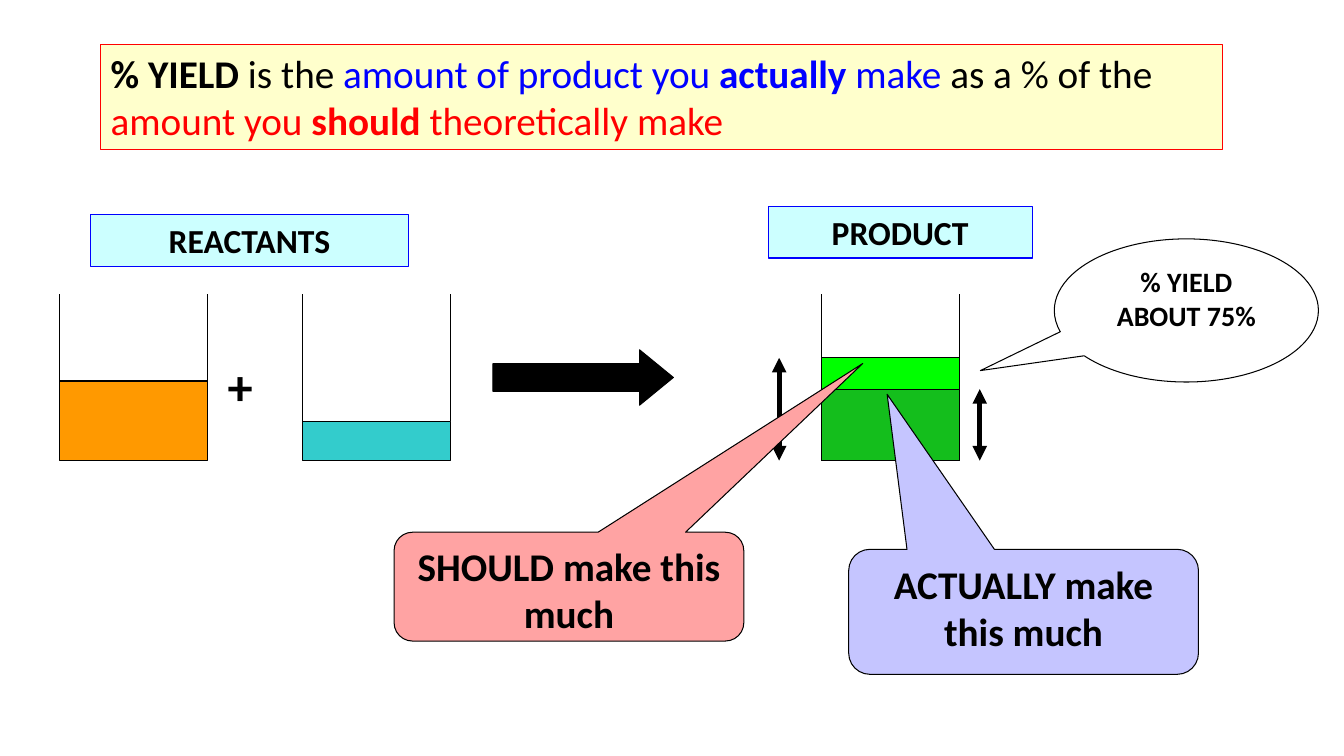
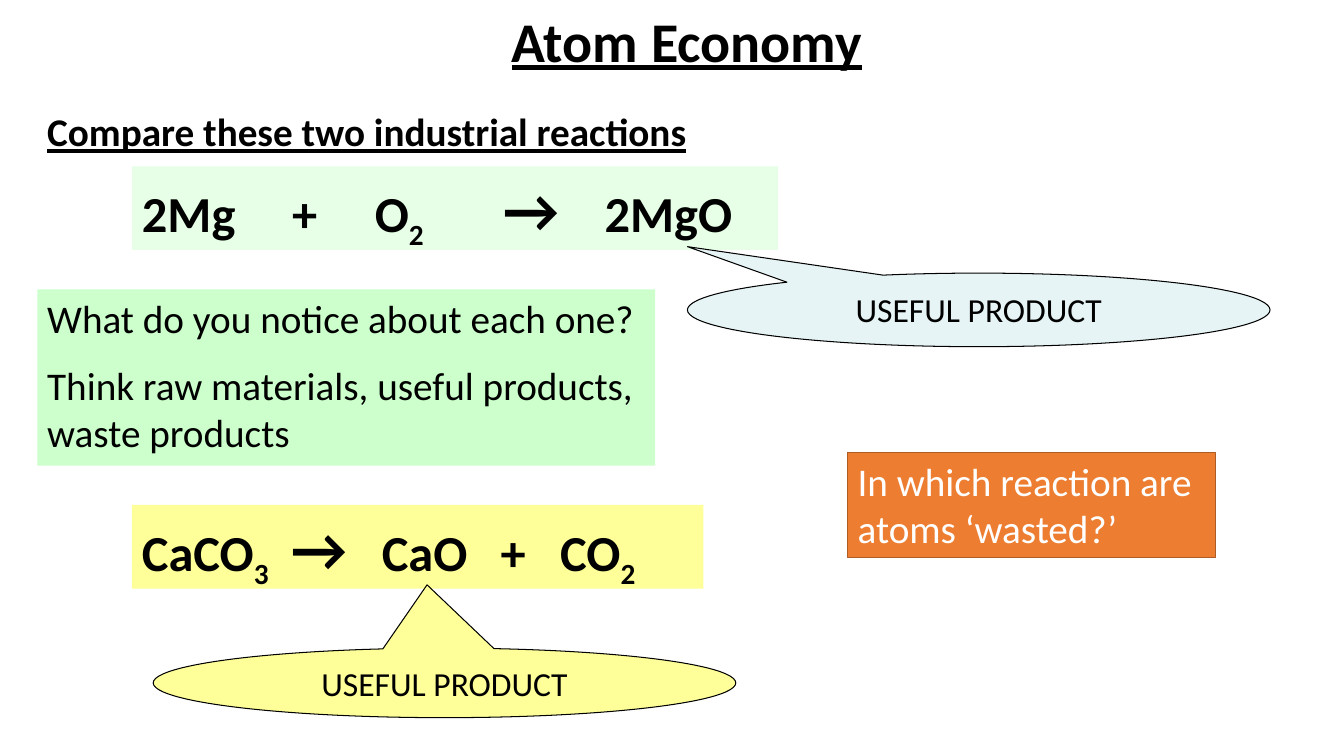
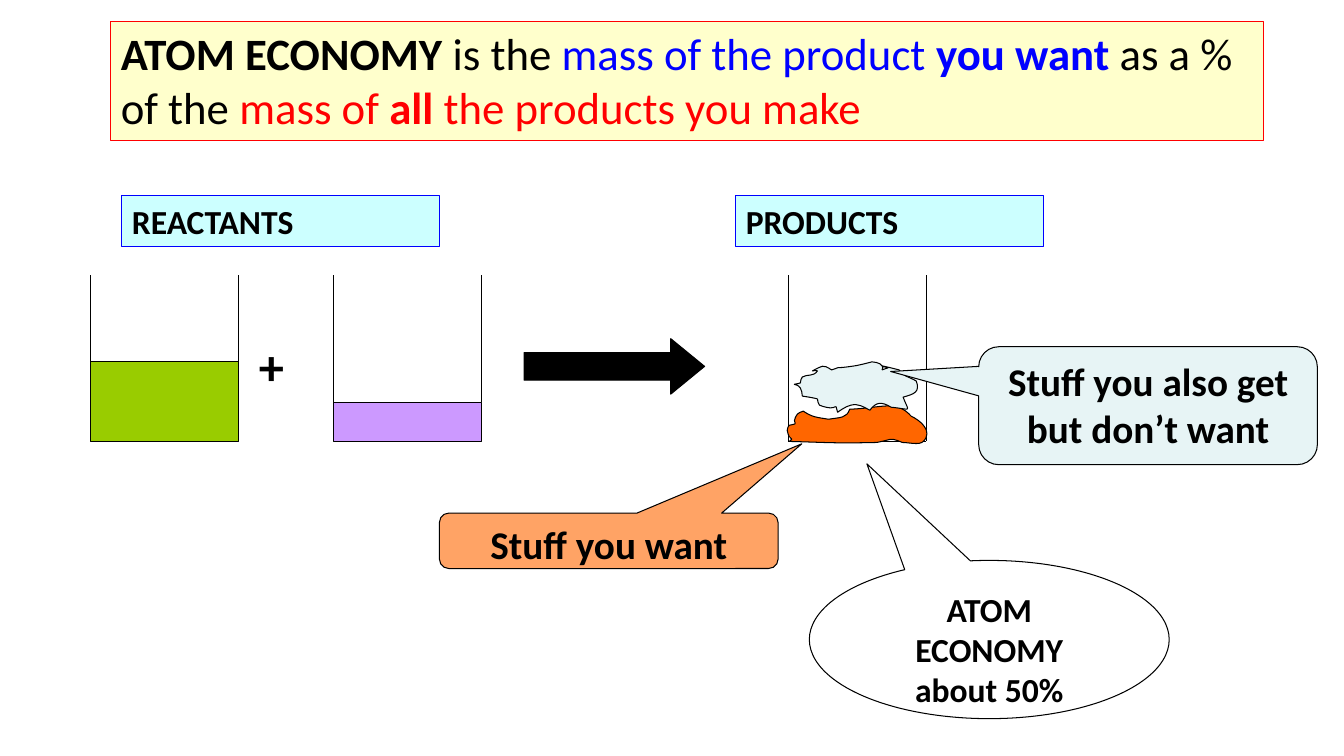
"""Build three chemistry slides on percentage yield and atom economy."""
from dataclasses import dataclass
from typing import NamedTuple

from lxml import etree
from pptx import Presentation
from pptx.dml.color import RGBColor
from pptx.enum.shapes import MSO_CONNECTOR, MSO_SHAPE
from pptx.enum.text import MSO_ANCHOR, MSO_AUTO_SIZE, PP_ALIGN
from pptx.oxml.ns import qn
from pptx.shapes.autoshape import Shape
from pptx.slide import Slide
from pptx.util import Inches, Pt

RECT = MSO_SHAPE.RECTANGLE
ARROW = MSO_SHAPE.RIGHT_ARROW
ROUND = MSO_SHAPE.ROUNDED_RECTANGULAR_CALLOUT
OVAL = MSO_SHAPE.OVAL_CALLOUT
STRAIGHT = MSO_CONNECTOR.STRAIGHT
LEFT, CENTER = PP_ALIGN.LEFT, PP_ALIGN.CENTER
TOP = MSO_ANCHOR.TOP
FIXED = MSO_AUTO_SIZE.NONE

FONT = "Calibri"
BLACK, WHITE, RED, BLUE = "000000", "FFFFFF", "FF0000", "0000FF"
CREAM, AQUA, MIST, LEMON = "FFFFCC", "CCFFFF", "E7F4F5", "FFFF99"
DEPTH = 1.65


class Box(NamedTuple):
    """Left, top, width and height in inches."""
    left: float
    top: float
    width: float
    height: float


class Run(NamedTuple):
    """Text with the format that sets it apart from its paragraph."""
    text: str
    color: str | None = None
    bold: bool | None = None
    size: float | None = None
    sub: bool = False


class Layer(NamedTuple):
    """A liquid in a beaker, measured from the base."""
    height: float
    color: str


@dataclass
class Beaker:
    """An open glass, its liquids and the length of its bare walls."""
    left: float
    top: float
    width: float
    layers: tuple[Layer, ...] = ()
    wall: float = DEPTH


@dataclass
class Bubble:
    """A callout with its pointer settings."""
    kind: MSO_SHAPE
    box: Box
    tip: tuple[float, ...]
    fill: str | None
    text: str
    size: float = 28
    bold: bool = True


@dataclass
class Scene:
    """What a reaction diagram needs."""
    left: float
    top: float
    arrow: float
    first: str
    second: str
    label: str
    spot: Box
    align: PP_ALIGN


def rgb(code: str) -> RGBColor:
    """Turn a hex string into a colour."""
    return RGBColor.from_string(code)


def place(box: Box) -> list[int]:
    """Turn a box into lengths."""
    return [Inches(side) for side in box]


def paint(shape: Shape, fill: str | None, line: str | None, width: float = 0.75) -> None:
    """Set fill and outline, with no shadow."""
    shape.shadow.inherit = False
    if fill:
        shape.fill.solid()
        shape.fill.fore_color.rgb = rgb(fill)
    else:
        shape.fill.background()
    if line:
        shape.line.color.rgb = rgb(line)
        shape.line.width = Pt(width)
    else:
        shape.line.fill.background()


def write(shape: Shape, *paras: str | list[Run], size: float = 28, color: str = BLACK,
          bold: bool = False, under: bool = False, align: PP_ALIGN = LEFT,
          gap: float = 0, tabs: tuple[float, ...] = ()) -> None:
    """Fill a shape with formatted paragraphs."""
    frame = shape.text_frame
    frame.word_wrap = True
    frame.auto_size = FIXED
    frame.vertical_anchor = TOP
    for index, runs in enumerate(paras):
        para = frame.add_paragraph() if index else frame.paragraphs[0]
        para.alignment = align
        para.space_before = Pt(gap if index else 0)
        if tabs:
            stops = etree.SubElement(para._p.get_or_add_pPr(), qn("a:tabLst"))
            for stop in tabs:
                etree.SubElement(stops, qn("a:tab"), pos=str(Inches(stop)), algn="l")
        for part in [Run(runs)] if isinstance(runs, str) else runs:
            run = para.add_run()
            run.text = part.text
            font = run.font
            font.name = FONT
            font.size = Pt(part.size or size)
            font.bold = bold if part.bold is None else part.bold
            font.underline = under
            font.color.rgb = rgb(part.color or color)
            if part.sub:
                run._r.get_or_add_rPr().set("baseline", "-25000")


def panel(slide: Slide, box: Box, fill: str | None = None, line: str | None = None,
          kind: MSO_SHAPE = RECT, tip: tuple[float, ...] = (), width: float = 0.75) -> Shape:
    """Add a painted preset shape."""
    shape = slide.shapes.add_shape(kind, *place(box))
    for index, value in enumerate(tip):
        shape.adjustments[index] = value
    paint(shape, fill, line, width)
    return shape


def rule(slide: Slide, start: tuple[float, float], end: tuple[float, float],
         width: float = 0.75, heads: bool = False) -> None:
    """Add a black line, with arrowheads if wanted."""
    line = slide.shapes.add_connector(STRAIGHT, *[Inches(v) for v in start + end])
    line.line.color.rgb = rgb(BLACK)
    line.line.width = Pt(width)
    if heads:
        for tag in ("a:headEnd", "a:tailEnd"):
            etree.SubElement(line.line._get_or_add_ln(), qn(tag), type="triangle")
    etree.SubElement(line.element.spPr, qn("a:effectLst"))


def glass(slide: Slide, item: Beaker) -> None:
    """Draw a beaker and its liquids."""
    right, base = item.left + item.width, item.top + DEPTH
    for side in (item.left, right):
        rule(slide, (side, item.top), (side, item.top + item.wall))
    if item.wall == DEPTH:
        rule(slide, (item.left, base), (right, base))
    for layer in item.layers:
        box = Box(item.left, base - layer.height, item.width, layer.height)
        panel(slide, box, layer.color, BLACK)


def speak(slide: Slide, item: Bubble) -> None:
    """Draw a callout."""
    shape = panel(slide, item.box, item.fill, BLACK, item.kind, item.tip)
    write(shape, item.text, size=item.size, bold=item.bold, align=CENTER)


def react(slide: Slide, item: Scene) -> None:
    """Draw two reactants, a plus, an arrow and both labels."""
    left, top = item.left, item.top
    for shift, layer in ((0, Layer(0.79, item.first)), (2.41, Layer(0.39, item.second))):
        glass(slide, Beaker(left + shift, top, 1.47, (layer,), DEPTH - layer.height))
    panel(slide, Box(left + 4.3, item.arrow, 1.79, 0.55), BLACK, BLACK, ARROW, (0.5, 0.61))
    plus = slide.shapes.add_textbox(*place(Box(left + 1.57, top + 0.55, 0.63, 0.7)))
    write(plus, "+", size=36, bold=True)
    labels = (("REACTANTS", Box(left + 0.31, top - 0.79, 3.15, 0.51)), (item.label, item.spot))
    for text, box in labels:
        write(panel(slide, box, AQUA, BLUE), text, size=24, bold=True, align=item.align)


def define(slide: Slide, box: Box, runs: list[Run], size: float) -> None:
    """Draw the definition banner."""
    write(panel(slide, box, CREAM, RED), runs, size=size)


def blob(slide: Slide, start: tuple[float, float], curves: list[tuple[float, ...]],
         fill: str) -> None:
    """Draw a closed outline of Bezier curves."""
    maker = slide.shapes.build_freeform(Inches(start[0]), Inches(start[1]))
    maker.add_line_segments([(Inches(c[4]), Inches(c[5])) for c in curves], close=True)
    shape = maker.convert_to_shape()
    for side, curve in zip(list(shape.element.iter(qn("a:lnTo"))), curves):
        bend = etree.Element(qn("a:cubicBezTo"))
        for x, y in zip(curve[::2], curve[1::2]):
            etree.SubElement(bend, qn("a:pt"), x=str(Inches(x) - shape.left),
                             y=str(Inches(y) - shape.top))
        side.getparent().replace(side, bend)
    paint(shape, fill, BLACK)


WANTED = [
    (8.22, 4.39, 8.27, 4.4, 8.7, 4.39), (8.75, 4.38, 8.79, 4.37, 8.83, 4.36),
    (8.87, 4.35, 8.95, 4.39, 8.95, 4.39), (9.02, 4.39, 9.12, 4.42, 9.16, 4.38),
    (9.26, 4.28, 9.13, 4.17, 9.04, 4.13), (8.89, 3.96, 8.75, 4.05, 8.43, 4.06),
    (8.4, 4.15, 8.34, 4.14, 8.22, 4.16), (8.1, 4.14, 8.06, 4.14, 7.97, 4.08),
    (7.95, 4.09, 7.92, 4.09, 7.91, 4.11), (7.83, 4.23, 7.96, 4.19, 7.83, 4.22),
    (7.82, 4.23, 7.81, 4.25, 7.81, 4.27), (7.83, 4.39, 7.89, 4.33, 7.83, 4.38),
]
WASTE = [
    (8.16, 3.63, 8.16, 3.61, 8.25, 3.67), (8.4, 3.62, 8.21, 3.67, 8.48, 3.63),
    (8.54, 3.62, 8.65, 3.59, 8.65, 3.59), (8.68, 3.6, 8.71, 3.59, 8.73, 3.61),
    (8.81, 3.67, 8.68, 3.69, 8.81, 3.65), (8.64, 3.6, 8.88, 3.66, 8.92, 3.67),
    (8.97, 3.74, 9, 3.73, 9.09, 3.78), (9.13, 3.89, 9.07, 3.91, 8.96, 3.94),
    (9.02, 4.1, 9.05, 4.06, 8.84, 4.04), (8.74, 3.98, 8.69, 3.99, 8.63, 4.07),
    (8.57, 4.04, 8.52, 4, 8.44, 4.02), (8.39, 4.03, 8.31, 4.09, 8.31, 4.09),
    (8.27, 3.96, 8.34, 4.1, 8.13, 4.02), (8.11, 4.01, 8.12, 3.98, 8.11, 3.96),
    (8.1, 3.95, 7.96, 3.93, 7.96, 3.93), (7.95, 3.9, 7.96, 3.87, 7.94, 3.85),
    (7.9, 3.79, 7.82, 3.83, 7.94, 3.8), (7.95, 3.78, 7.94, 3.75, 7.96, 3.74),
    (8.01, 3.71, 8.07, 3.74, 8.11, 3.68), (8.11, 3.67, 8.08, 3.68, 8.06, 3.68),
]


def show_yield(slide: Slide) -> None:
    """Explain percentage yield."""
    define(slide, Box(1, 0.44, 11.13, 1.04), [
        Run("% YIELD ", bold=True), Run("is the "), Run("amount of product you ", BLUE),
        Run("actually", BLUE, True), Run(" make", BLUE), Run(" as a % of the "),
        Run("amount you ", RED), Run("should", RED, True), Run(" theoretically make", RED),
    ], 28)
    react(slide, Scene(0.59, 2.92, 3.47, "FF9900", "33CCCC", "PRODUCT",
                       Box(7.62, 2.05, 2.62, 0.51), CENTER))
    layers = (Layer(1.02, "00FF00"), Layer(0.71, "14BE1C"))
    glass(slide, Beaker(8.15, 2.92, 1.37, layers))
    for x, layer in zip((7.73, 9.72), layers):
        rule(slide, (x, 4.57 - layer.height), (x, 4.57), 3.5, True)
    for bubble in (
        Bubble(ROUND, Box(3.91, 5.28, 3.47, 1.08), (0.84, -2.05, 0.17), "FFA3A3",
               "SHOULD make this much"),
        Bubble(ROUND, Box(8.42, 5.45, 3.47, 1.24), (-0.39, -1.74, 0.17), "C5C5FF",
               "ACTUALLY make this much"),
        Bubble(OVAL, Box(10.46, 2.37, 2.62, 1.42), (-0.78, 0.42), None,
               "% YIELD ABOUT 75%", 20),
    ):
        speak(slide, bubble)


def show_atoms(slide: Slide) -> None:
    """Compare two industrial reactions."""
    title = slide.shapes.title
    title.left, title.top, title.width, title.height = place(Box(4.4, 0.01, 4.83, 0.77))
    write(title, "Atom Economy", size=40, bold=True, under=True, align=CENTER)

    arrow = Run("\t→", size=44)
    for box, fill, tabs, runs in (
        (Box(1.31, 5.01, 5.67, 0.83), LEMON, (1.48, 2.38, 3.56, 4.15),
         [Run("CaCO"), Run("3", sub=True), arrow, Run("\tCaO\t+\tCO"), Run("2", sub=True)]),
        (Box(1.31, 1.65, 6.41, 0.83), "E7FFE7", (1.49, 2.31, 3.59, 4.59),
         [Run("2Mg\t+\tO"), Run("2", sub=True), arrow, Run("\t2MgO")]),
    ):
        write(panel(slide, box, fill), runs, size=36, bold=True, tabs=tabs)

    for box, tip, fill in (
        (Box(6.82, 2.71, 5.78, 0.73), (-0.5, -0.86), MIST),
        (Box(1.52, 6.43, 5.78, 0.69), (-0.03, -1.41), LEMON),
    ):
        speak(slide, Bubble(OVAL, box, tip, fill, "USEFUL PRODUCT", 24, False))

    head = slide.shapes.add_textbox(*place(Box(0.37, 1.02, 6.62, 0.57)))
    write(head, "Compare these two industrial reactions", bold=True, under=True)
    write(panel(slide, Box(0.37, 2.87, 6.13, 1.75), "CCFFCC"),
          "What do you notice about each one?",
          "Think raw materials, useful products, waste products", gap=14)
    write(panel(slide, Box(8.41, 4.49, 3.65, 1.04), "ED7D31", "AF5C24", width=1),
          "In which reaction are atoms ‘wasted?’", color=WHITE)


def show_waste(slide: Slide) -> None:
    """Explain atom economy."""
    react(slide, Scene(0.9, 2.73, 3.36, "99CC00", "CC99FF", "PRODUCTS",
                       Box(7.3, 1.94, 3.05, 0.51), LEFT))
    glass(slide, Beaker(7.82, 2.73, 1.37))
    blob(slide, (7.83, 4.38), WANTED, "FF6600")
    blob(slide, (8.06, 3.68), WASTE, MIST)
    define(slide, Box(1.1, 0.21, 11.44, 1.18), [
        Run("ATOM ECONOMY", bold=True), Run(" is the "), Run("mass of the product ", BLUE),
        Run("you want", BLUE, True), Run(" as a % of the "), Run("mass of ", RED),
        Run("all", RED, True), Run(" the products you make", RED),
    ], 32)
    for bubble in (
        Bubble(ROUND, Box(4.36, 5.09, 3.36, 0.55), (0.57, -1.75, 0.17), "FFA365",
               "Stuff you want"),
        Bubble(ROUND, Box(9.71, 3.44, 3.36, 1.17), (-0.76, -0.29, 0.17), MIST,
               "Stuff you also get but don’t want"),
        Bubble(OVAL, Box(8.03, 5.56, 3.57, 1.57), (-0.34, -1.11), None,
               "ATOM ECONOMY about 50%", 24),
    ):
        speak(slide, bubble)


def main() -> None:
    """Build and save the deck."""
    deck = Presentation()
    deck.slide_width, deck.slide_height = Inches(40 / 3), Inches(7.5)
    titled, blank = deck.slide_layouts[5], deck.slide_layouts[6]
    for draw, layout in ((show_yield, blank), (show_atoms, titled), (show_waste, blank)):
        draw(deck.slides.add_slide(layout))
    deck.save("out.pptx")


if __name__ == "__main__":
    main()
